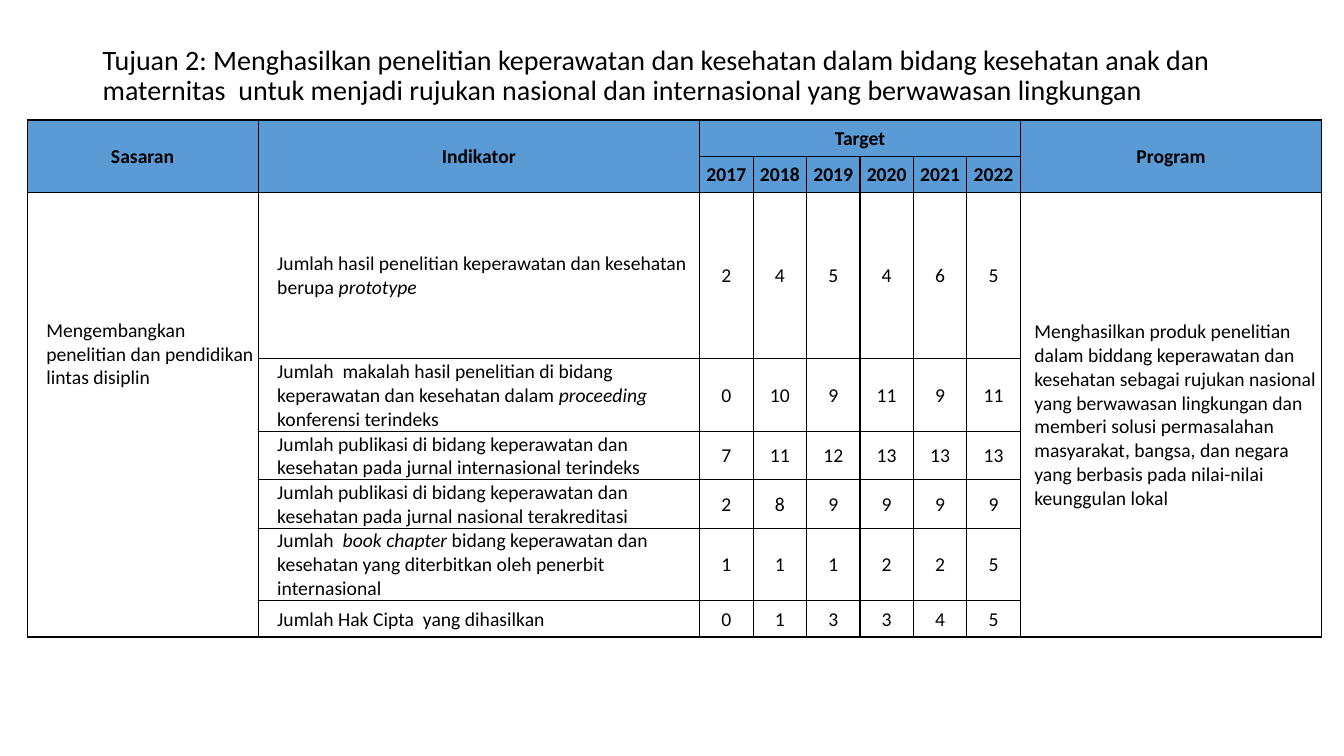
import pptx
import pptx.util
import pptx.dml.color
import pptx.enum.text
import pptx.oxml
import pptx.oxml.ns

Inches = pptx.util.Inches
Align = pptx.enum.text.PP_ALIGN
Anchor = pptx.enum.text.MSO_ANCHOR
BLACK = pptx.dml.color.RGBColor(0x00, 0x00, 0x00)
HEADER_BLUE = pptx.dml.color.RGBColor(0x5B, 0x9B, 0xD5)

TITLE = ("Tujuan 2: Menghasilkan penelitian keperawatan dan kesehatan dalam bidang kesehatan anak dan "
         "maternitas  untuk menjadi rujukan nasional dan internasional yang berwawasan lingkungan")
GOAL = "Mengembangkan penelitian dan pendidikan lintas disiplin"
PROGRAM = ("Menghasilkan produk penelitian dalam biddang keperawatan dan kesehatan sebagai rujukan "
           "nasional yang berwawasan lingkungan dan memberi solusi permasalahan masyarakat, bangsa, "
           "dan negara yang berbasis pada nilai-nilai keunggulan lokal")
YEARS = range(2017, 2023)
INDICATORS = [
    ("Jumlah hasil penelitian keperawatan dan kesehatan berupa *prototype*", [2, 4, 5, 4, 6, 5]),
    ("Jumlah  makalah hasil penelitian di bidang keperawatan dan kesehatan dalam *proceeding* "
     "konferensi terindeks", [0, 10, 9, 11, 9, 11]),
    ("Jumlah publikasi di bidang keperawatan dan kesehatan pada jurnal internasional terindeks",
     [7, 11, 12, 13, 13, 13]),
    ("Jumlah publikasi di bidang keperawatan dan kesehatan pada jurnal nasional terakreditasi",
     [2, 8, 9, 9, 9, 9]),
    ("Jumlah  *book chapter *bidang keperawatan dan kesehatan yang diterbitkan oleh penerbit "
     "internasional", [1, 1, 1, 2, 2, 5]),
    ("Jumlah Hak Cipta  yang dihasilkan", [0, 1, 3, 3, 4, 5]),
]
COLUMN_WIDTHS = [2.29, 4.38] + [0.53] * len(YEARS) + [2.99]
ROW_HEIGHTS = [0.36, 0.36, 1.65, 0.72, 0.48, 0.48, 0.72, 0.36]


def write(frame, text, size=14, bold=False, align=Align.LEFT, indent=0, spacing=None):
    para = frame.paragraphs[0]
    para.alignment = align
    para.line_spacing = spacing
    if indent:
        properties = para._p.get_or_add_pPr()
        properties.set("marL", str(Inches(indent)))
        properties.set("indent", "0")
    for index, part in enumerate(text.split("*")):
        if part:
            span = para.add_run()
            span.text = part
            span.font.name = "Calibri"
            span.font.size = pptx.util.Pt(size)
            span.font.bold = bold
            span.font.italic = index % 2 == 1
            span.font.color.rgb = BLACK


def style_cell(cell, fill):
    properties = cell._tc.get_or_add_tcPr()
    for side in ("lnL", "lnR", "lnT", "lnB"):
        properties.append(pptx.oxml.parse_xml(
            f'<a:{side} {pptx.oxml.ns.nsdecls("a")} w="{pptx.util.Pt(1)}">'
            f'<a:solidFill><a:srgbClr val="{BLACK}"/></a:solidFill></a:{side}>'))
    if fill is None:
        cell.fill.background()
    else:
        cell.fill.solid()
        cell.fill.fore_color.rgb = fill
    cell.vertical_anchor = Anchor.MIDDLE
    cell.margin_left = cell.margin_right = cell.margin_top = Inches(0.01)
    cell.margin_bottom = 0


def add_title(page, left, top, width, height):
    box = page.shapes.add_textbox(Inches(left), Inches(top), Inches(width), Inches(height))
    box.text_frame.word_wrap = True
    box.text_frame.vertical_anchor = Anchor.MIDDLE
    write(box.text_frame, TITLE, size=20, spacing=0.9)


def add_target_table(page, left, top):
    table = page.shapes.add_table(
        len(ROW_HEIGHTS), len(COLUMN_WIDTHS), Inches(left), Inches(top),
        Inches(sum(COLUMN_WIDTHS)), Inches(sum(ROW_HEIGHTS))).table
    table.first_row = table.horz_banding = False
    for column, width in zip(table.columns, COLUMN_WIDTHS):
        column.width = Inches(width)
    for index, height in enumerate(ROW_HEIGHTS):
        table.rows[index].height = Inches(height)
        for cell in table.rows[index].cells:
            style_cell(cell, HEADER_BLUE if index < 2 else None)

    last_row, last_column = len(ROW_HEIGHTS) - 1, len(COLUMN_WIDTHS) - 1
    for column in (0, 1, last_column):
        table.cell(0, column).merge(table.cell(1, column))
    table.cell(0, 2).merge(table.cell(0, last_column - 1))
    for column in (0, last_column):
        table.cell(2, column).merge(table.cell(last_row, column))

    for column, heading in ((0, "Sasaran"), (1, "Indikator"), (2, "Target"), (last_column, "Program")):
        write(table.cell(0, column).text_frame, heading, bold=True, align=Align.CENTER)
    for column, year in enumerate(YEARS, 2):
        write(table.cell(1, column).text_frame, str(year), bold=True, align=Align.CENTER)

    goal = table.cell(2, 0)
    goal.vertical_anchor = Anchor.TOP
    goal.margin_top = Inches(1.25)
    write(goal.text_frame, GOAL, indent=0.18)
    write(table.cell(2, last_column).text_frame, PROGRAM, indent=0.13)
    for row, (indicator, targets) in enumerate(INDICATORS, 2):
        write(table.cell(row, 1).text_frame, indicator, indent=0.18)
        for column, target in enumerate(targets, 2):
            write(table.cell(row, column).text_frame, str(target), align=Align.CENTER)


def main():
    deck = pptx.Presentation()
    deck.slide_width, deck.slide_height = Inches(13.33), Inches(7.5)
    page = deck.slides.add_slide(deck.slide_layouts[6])
    add_title(page, 0.92, 0.4, 11.5, 0.71)
    add_target_table(page, 0.27, 1.19)
    deck.save("out.pptx")


if __name__ == "__main__":
    main()
